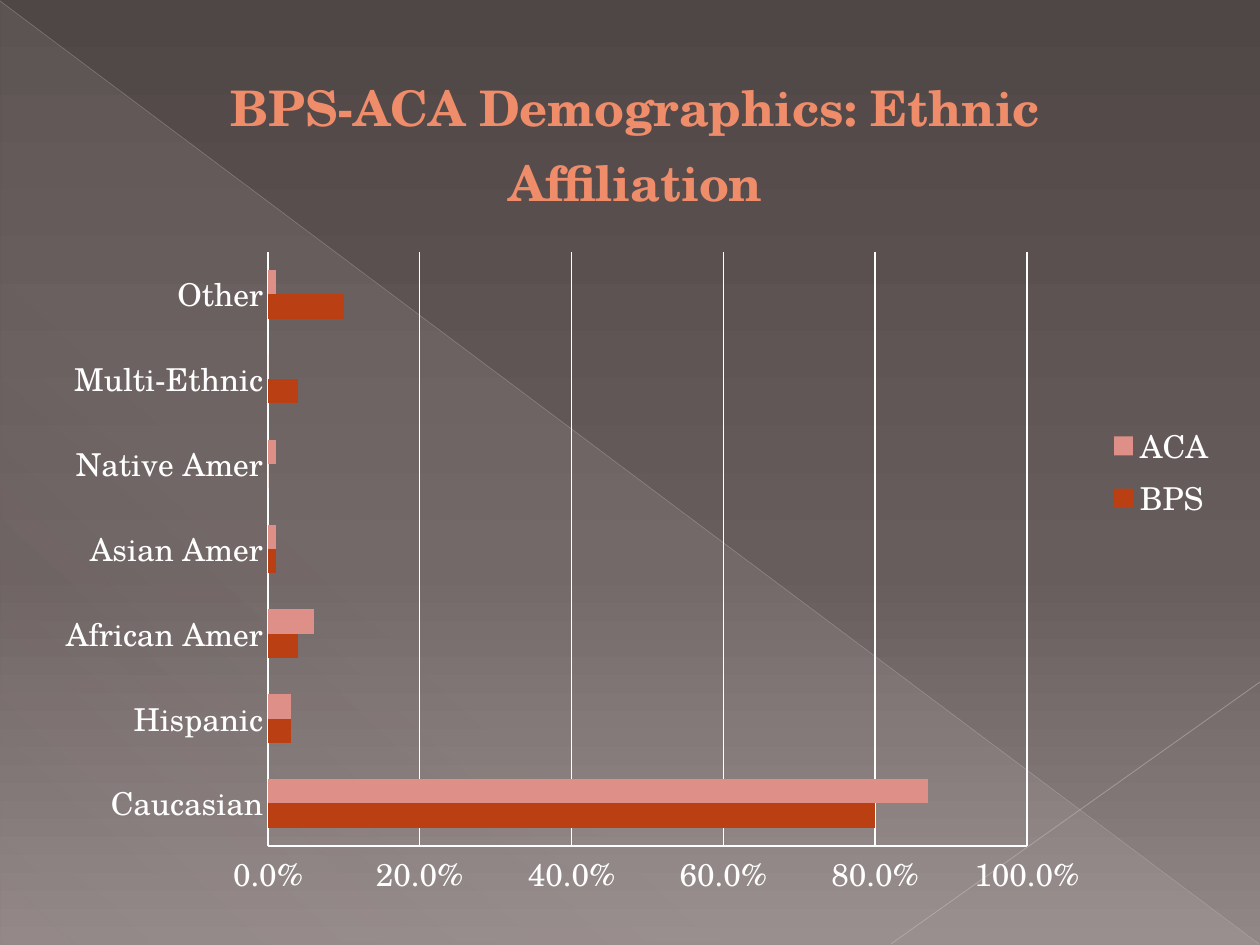
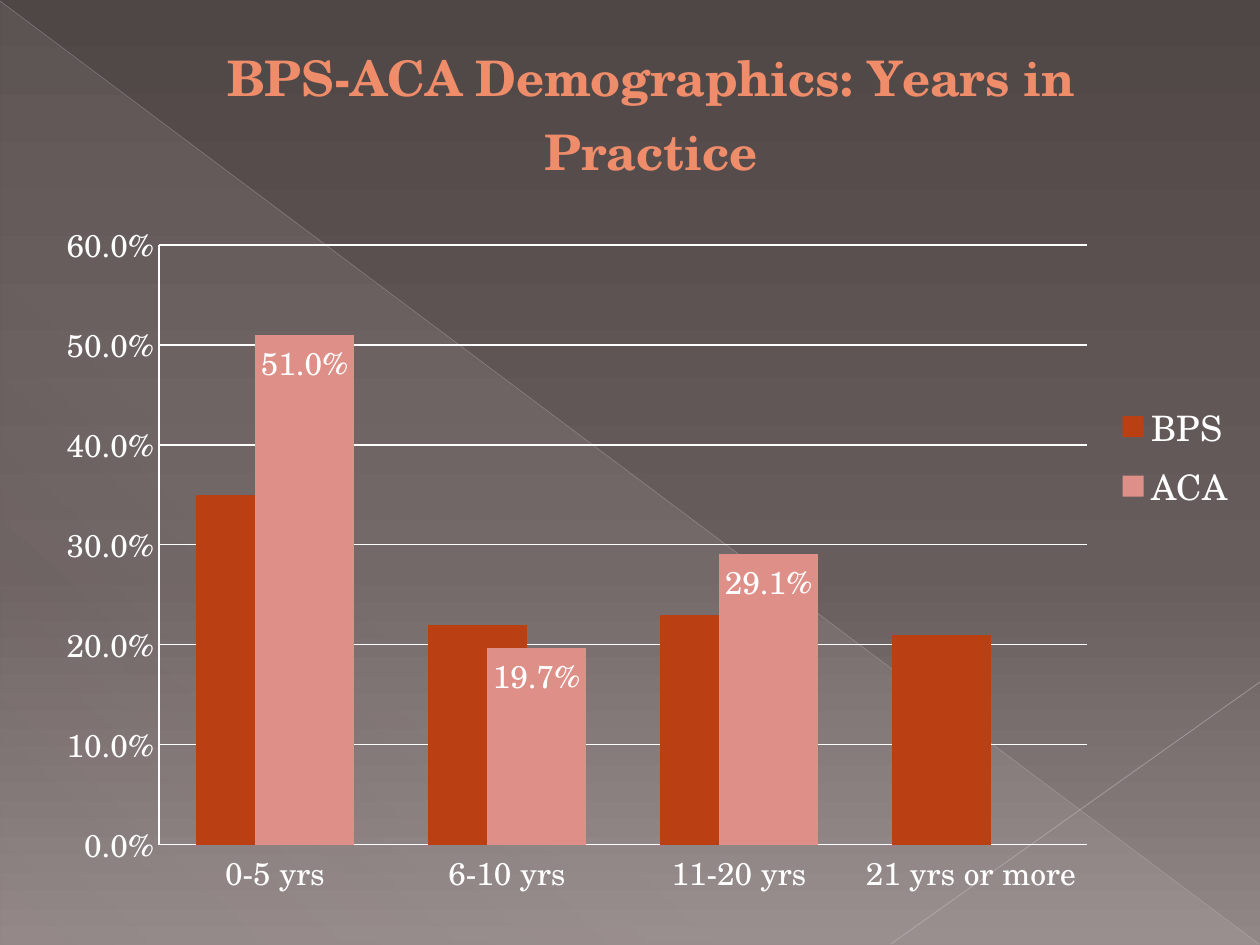
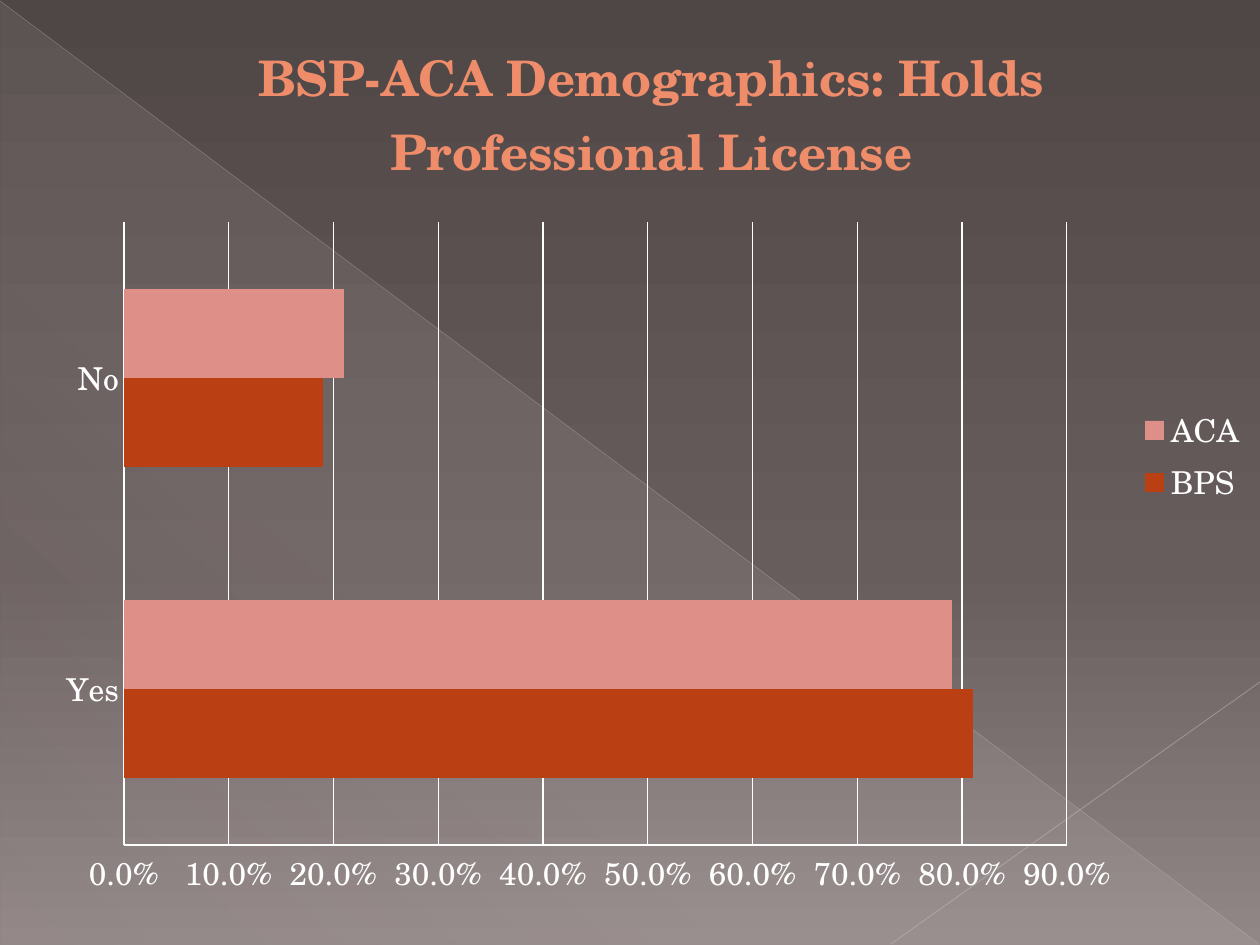
from lxml import etree
from pptx import Presentation
from pptx.chart.data import CategoryChartData
from pptx.dml.color import RGBColor
from pptx.enum.chart import XL_CHART_TYPE, XL_LABEL_POSITION, XL_LEGEND_POSITION, XL_TICK_MARK
from pptx.enum.shapes import MSO_CONNECTOR, MSO_SHAPE
from pptx.oxml.ns import qn
from pptx.util import Pt

# Shared look
PX_PER_INCH = 126
WIDTH, HEIGHT = 1260, 945
FONT = "TeX Gyre Schola"
WHITE, TITLE_COLOR = "FFFFFF", "EF8C6A"
BPS_COLOR, ACA_COLOR = "BA4014", "DE9088"
PERCENT = "0.0%"

# Gradient stops: position %, colour, opacity %
BACKDROP = [(0, "4F4646", 100), (60, "685D5D", 100), (100, "928787", 100)]
SHEEN = [(0, "E9E5DC", 10), (70, "E9E5DC", 8), (100, "E9E5DC", 1)]

# Crossing lines: begin x, y, end x, y, colour, width in points, opacity %
RAYS = [
    (0, 1, 1259, 944, "C1BEBE", 0.39, 35),
    (1260, 682, 891, 944, "C7C5C5", 0.47, 45),
]

# Content; frame and plot are left, top, width, height
DEMOGRAPHICS = [
    {
        "title": "BPS-ACA Demographics: Ethnic Affiliation",
        "kind": XL_CHART_TYPE.BAR_CLUSTERED,
        "frame": (42, 31, 1187, 882),
        "plot": (268, 252, 759, 594),
        "groups": ["Caucasian", "Hispanic", "African Amer", "Asian Amer",
                   "Native Amer", "Multi-Ethnic", "Other"],
        "series": {
            "BPS": [0.8, 0.03, 0.04, 0.01, 0, 0.04, 0.1],
            "ACA": [0.87, 0.03, 0.06, 0.01, 0.01, 0, 0.01],
        },
        "top": 1, "step": 0.2,
    },
    {
        "title": "BPS-ACA Demographics: Years in Practice",
        "kind": XL_CHART_TYPE.COLUMN_CLUSTERED,
        "frame": (42, 0, 1218, 913),
        "plot": (159, 245, 928, 600),
        "groups": ["0-5 yrs", "6-10 yrs", "11-20 yrs", "21 yrs or more"],
        "series": {
            "BPS": [0.35, 0.22, 0.23, 0.21],
            "ACA ": [0.51, 0.197, 0.291, None],
        },
        "top": 0.6, "step": 0.1,
        "gap": 75, "overlap": 40, "legend_size": 20, "labelled": "ACA ",
    },
    {
        "title": "BSP-ACA Demographics: Holds Professional License",
        "kind": XL_CHART_TYPE.BAR_CLUSTERED,
        "frame": (42, 0, 1218, 913),
        "plot": (124, 222, 943, 623),
        "groups": ["Yes", "No"],
        "series": {
            "BPS": [0.81, 0.19],
            "ACA": [0.79, 0.21],
        },
        "top": 0.9, "step": 0.1,
    },
]


def px(length):
    return round(length * 914400 / PX_PER_INCH)


def rgb(color):
    return RGBColor.from_string(color)


def add_tag(parent, tag, **attributes):
    return etree.SubElement(parent, qn(tag), {k: str(v) for k, v in attributes.items()})


def set_font(font, size, color=WHITE, bold=False):
    font.name, font.size, font.bold = FONT, Pt(size), bold
    font.color.rgb = rgb(color)


def set_gradient(owner, fill, stops, angle):
    fill.gradient()
    gradient = owner.element.find(".//" + qn("a:gradFill"))
    for child in list(gradient):
        gradient.remove(child)
    stop_list = add_tag(gradient, "a:gsLst")
    for position, color, opacity in stops:
        stop = add_tag(stop_list, "a:gs", pos=position * 1000)
        add_tag(add_tag(stop, "a:srgbClr", val=color), "a:alpha", val=opacity * 1000)
    add_tag(gradient, "a:lin", ang=angle * 60000, scaled=0)


def add_backdrop(slide):
    set_gradient(slide, slide.background.fill, BACKDROP, 90)
    sheen = slide.shapes.add_shape(MSO_SHAPE.RIGHT_TRIANGLE, px(1), px(2), px(1259), px(943))
    sheen.shadow.inherit = False
    sheen.line.fill.background()
    set_gradient(sheen, sheen.fill, SHEEN, 133)
    for x1, y1, x2, y2, color, width, opacity in RAYS:
        ray = slide.shapes.add_connector(MSO_CONNECTOR.STRAIGHT, px(x1), px(y1), px(x2), px(y2))
        ray.line.color.rgb = rgb(color)
        ray.line.width = Pt(width)
        properties = ray.element.find(qn("p:spPr"))
        add_tag(properties.find(".//" + qn("a:srgbClr")), "a:alpha", val=opacity * 1000)
        add_tag(properties, "a:effectLst")


def place_plot(chart, frame, plot):
    """Fix the inner plot area as fractions of the chart frame."""
    area = chart.element.find(".//" + qn("c:plotArea"))
    for old in area.findall(qn("c:layout")):
        area.remove(old)
    layout = etree.Element(qn("c:layout"))
    area.insert(0, layout)
    manual = add_tag(layout, "c:manualLayout")
    add_tag(manual, "c:layoutTarget", val="inner")
    for mode in ("c:xMode", "c:yMode"):
        add_tag(manual, mode, val="edge")
    left, top, width, height = frame
    x, y, w, h = plot
    fractions = {"x": (x - left) / width, "y": (y - top) / height, "w": w / width, "h": h / height}
    for name, value in fractions.items():
        add_tag(manual, "c:" + name, val=round(value, 4))


def style_axes(chart, top, step):
    for axis in (chart.category_axis, chart.value_axis):
        axis.major_tick_mark = axis.minor_tick_mark = XL_TICK_MARK.NONE
        axis.format.line.color.rgb = rgb(WHITE)
        set_font(axis.tick_labels.font, 18)
    values = chart.value_axis
    values.minimum_scale, values.maximum_scale, values.major_unit = 0, top, step
    values.has_major_gridlines = True
    values.major_gridlines.format.line.color.rgb = rgb(WHITE)
    values.tick_labels.number_format = PERCENT
    values.tick_labels.number_format_is_linked = False


def style_bars(plot, content):
    plot.vary_by_categories = False
    plot.gap_width = content.get("gap", 150)
    plot.overlap = content.get("overlap", 0)
    for series, color in zip(plot.series, (BPS_COLOR, ACA_COLOR)):
        series.invert_if_negative = False
        series.format.fill.solid()
        series.format.fill.fore_color.rgb = rgb(color)
        if series.name == content.get("labelled"):
            labels = series.data_labels
            labels.show_value = True
            labels.number_format = PERCENT
            labels.number_format_is_linked = False
            labels.position = XL_LABEL_POSITION.INSIDE_END
            set_font(labels.font, 18)


def add_demographics(slide, content):
    data = CategoryChartData(number_format=PERCENT)
    data.categories = content["groups"]
    for name, shares in content["series"].items():
        data.add_series(name, shares)
    frame = content["frame"]
    chart = slide.shapes.add_chart(content["kind"], *map(px, frame), data).chart
    set_font(chart.font, 18)

    # Title and legend
    chart.has_title = True
    heading = chart.chart_title.text_frame
    heading.text = content["title"]
    set_font(heading.paragraphs[0].runs[0].font, 28, TITLE_COLOR, bold=True)
    chart.chart_title.include_in_layout = False
    chart.has_legend = True
    chart.legend.position = XL_LEGEND_POSITION.RIGHT
    chart.legend.include_in_layout = False
    set_font(chart.legend.font, content.get("legend_size", 18))

    place_plot(chart, frame, content["plot"])
    style_axes(chart, content["top"], content["step"])
    style_bars(chart.plots[0], content)


def main():
    deck = Presentation()
    deck.slide_width, deck.slide_height = px(WIDTH), px(HEIGHT)
    for content in DEMOGRAPHICS:
        slide = deck.slides.add_slide(deck.slide_layouts[6])
        add_backdrop(slide)
        add_demographics(slide, content)
    deck.save("out.pptx")


if __name__ == "__main__":
    main()
